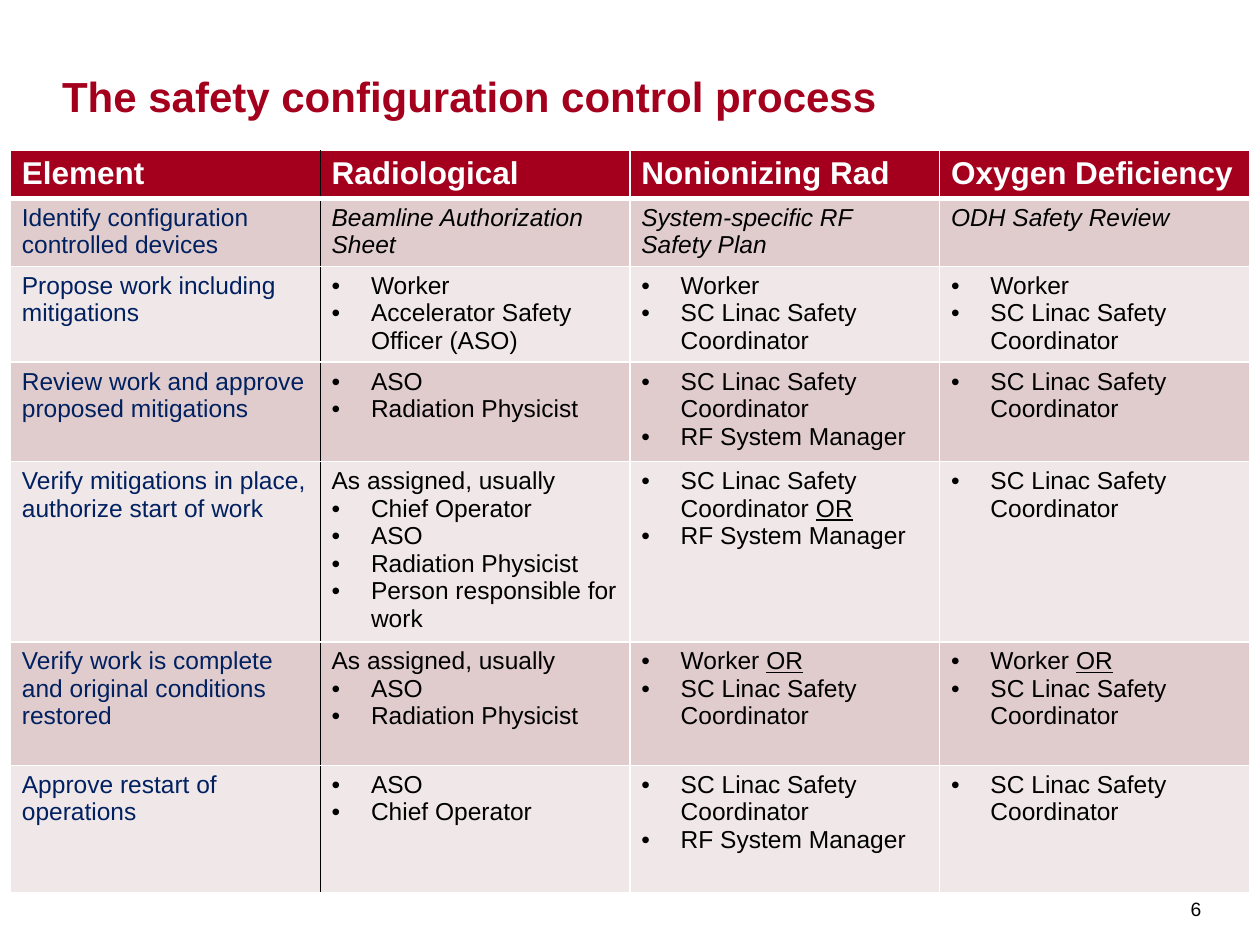
from dataclasses import dataclass

from lxml import etree
from pptx import Presentation
from pptx.dml.color import RGBColor
from pptx.enum import text as t
from pptx.oxml import ns
from pptx.util import Pt

FONT = "Arial"
RED, NAVY, BLACK, WHITE = "A4001D", "002060", "000000", "FFFFFF"
BANDS = ("E0CCCD", "F0E7E8")
COLUMN_WIDTH = 177
BULLET_INDENT = 22.5


@dataclass(frozen=True)
class Line:
    text: str
    bullet: bool = True
    underlined: str = ""


@dataclass(frozen=True)
class Step:
    height: float
    element: str
    cells: tuple
    italic: bool = False


def plain(text: str) -> Line:
    return Line(text, bullet=False)


def bullets(*texts: str) -> list:
    return [Line(text) for text in texts]


COORDINATOR = "SC Linac Safety Coordinator"
RF_MANAGER = "RF System Manager"
ASSIGNED = plain("As assigned, usually")
WORKER_OR = [Line("Worker ", underlined="OR"), Line(COORDINATOR)]

HEADINGS = ("Element", "Radiological", "Nonionizing Rad", "Oxygen Deficiency")
HEADING_HEIGHT = 27.4
STEPS = (
    Step(38.9, "Identify configuration controlled devices",
         ([plain("Beamline Authorization Sheet")],
          [plain("System-specific RF Safety Plan")],
          [plain("ODH Safety Review")]), italic=True),
    Step(54.7, "Propose work including mitigations",
         (bullets("Worker", "Accelerator Safety Officer (ASO)"),
          bullets("Worker", COORDINATOR),
          bullets("Worker", COORDINATOR))),
    Step(56.9, "Review work and approve proposed mitigations",
         (bullets("ASO", "Radiation Physicist"),
          bullets(COORDINATOR, RF_MANAGER),
          bullets(COORDINATOR))),
    Step(103, "Verify mitigations in place, authorize start of work",
         ([ASSIGNED] + bullets("Chief Operator", "ASO", "Radiation Physicist",
                               "Person responsible for work"),
          [Line(COORDINATOR + " ", underlined="OR"), Line(RF_MANAGER)],
          bullets(COORDINATOR))),
    Step(70.6, "Verify work is complete and original conditions restored",
         ([ASSIGNED] + bullets("ASO", "Radiation Physicist"),
          WORKER_OR, WORKER_OR)),
    Step(72.7, "Approve restart of operations",
         (bullets("ASO", "Chief Operator"),
          bullets(COORDINATOR, RF_MANAGER),
          bullets(COORDINATOR))),
)


def color(value: str) -> RGBColor:
    return RGBColor.from_string(value)


def add_run(paragraph, text: str, size: float, fill: str, bold=False,
            italic=False, underline=False) -> None:
    run = paragraph.add_run()
    run.text = text
    font = run.font
    font.name, font.size = FONT, Pt(size)
    font.bold, font.italic, font.underline = bold, italic, underline
    font.color.rgb = color(fill)


def set_frame(frame, anchor, left=0, top=0, right=0, bottom=0) -> None:
    frame.word_wrap = True
    frame.auto_size = t.MSO_AUTO_SIZE.NONE
    frame.vertical_anchor = anchor
    frame.margin_left, frame.margin_top = Pt(left), Pt(top)
    frame.margin_right, frame.margin_bottom = Pt(right), Pt(bottom)


def add_bullet(paragraph) -> None:
    properties = paragraph._p.get_or_add_pPr()
    properties.set("marL", str(Pt(BULLET_INDENT)))
    properties.set("indent", str(-Pt(BULLET_INDENT)))
    etree.SubElement(properties, ns.qn("a:buFont"), typeface=FONT)
    etree.SubElement(properties, ns.qn("a:buChar"), char="•")


def set_borders(cell, row: int, column: int) -> None:
    # A black rule separates the first column from the others
    edges = {
        "L": (BLACK if column == 1 else WHITE, 1),
        "R": (BLACK if column == 0 else WHITE, 1),
        "T": (WHITE, 3 if row == 1 else 1),
        "B": (WHITE, 3 if row == 0 else 1),
    }
    properties = cell._tc.get_or_add_tcPr()
    for side, (fill, width) in edges.items():
        line = etree.SubElement(properties, ns.qn(f"a:ln{side}"), w=str(Pt(width)))
        solid = etree.SubElement(line, ns.qn("a:solidFill"))
        etree.SubElement(solid, ns.qn("a:srgbClr"), val=fill)


def fill_cell(table, row: int, column: int, lines: list, background: str,
              size: float, fill: str, bold=False, italic=False) -> None:
    cell = table.cell(row, column)
    set_borders(cell, row, column)
    cell.fill.solid()
    cell.fill.fore_color.rgb = color(background)
    cell.margin_left = cell.margin_right = Pt(6.5)
    cell.margin_top = cell.margin_bottom = Pt(3.2)
    for index, line in enumerate(lines):
        frame = cell.text_frame
        paragraph = frame.add_paragraph() if index else frame.paragraphs[0]
        if line.bullet:
            add_bullet(paragraph)
        add_run(paragraph, line.text, size, fill, bold, italic)
        if line.underlined:
            add_run(paragraph, line.underlined, size, fill, bold, italic, True)


def add_title(slide, text: str) -> None:
    title = slide.shapes.title
    title.left, title.top = Pt(35.5), Pt(10)
    title.width, title.height = Pt(638), Pt(59)
    set_frame(title.text_frame, t.MSO_ANCHOR.BOTTOM)
    paragraph = title.text_frame.paragraphs[0]
    paragraph.alignment = t.PP_ALIGN.LEFT
    add_run(paragraph, text, 24, RED, bold=True)


def add_process_table(slide) -> None:
    heights = [HEADING_HEIGHT] + [step.height for step in STEPS]
    columns = len(HEADINGS)
    table = slide.shapes.add_table(
        len(heights), columns, Pt(6), Pt(86),
        Pt(COLUMN_WIDTH * columns), Pt(sum(heights))).table
    for column in table.columns:
        column.width = Pt(COLUMN_WIDTH)
    for row, height in zip(table.rows, heights):
        row.height = Pt(height)
    for column, heading in enumerate(HEADINGS):
        fill_cell(table, 0, column, [plain(heading)], RED, 18, WHITE, bold=True)
    for row, step in enumerate(STEPS, start=1):
        band = BANDS[(row - 1) % 2]
        fill_cell(table, row, 0, [plain(step.element)], band, 14, NAVY)
        for column, lines in enumerate(step.cells, start=1):
            fill_cell(table, row, column, lines, band, 14, BLACK,
                      italic=step.italic)


def add_page_number(slide, number: str) -> None:
    box = slide.shapes.add_textbox(Pt(674.6), Pt(497.5), Pt(25), Pt(42.5))
    set_frame(box.text_frame, t.MSO_ANCHOR.MIDDLE, 5.8, 4.3, 5.8, 3.6)
    add_run(box.text_frame.paragraphs[0], number, 11, BLACK)


def main() -> None:
    presentation = Presentation()
    presentation.slide_width, presentation.slide_height = Pt(720), Pt(540)
    slide = presentation.slides.add_slide(presentation.slide_layouts[5])
    add_page_number(slide, "6")
    add_title(slide, "The safety configuration control process")
    add_process_table(slide)
    presentation.save("out.pptx")


if __name__ == "__main__":
    main()
